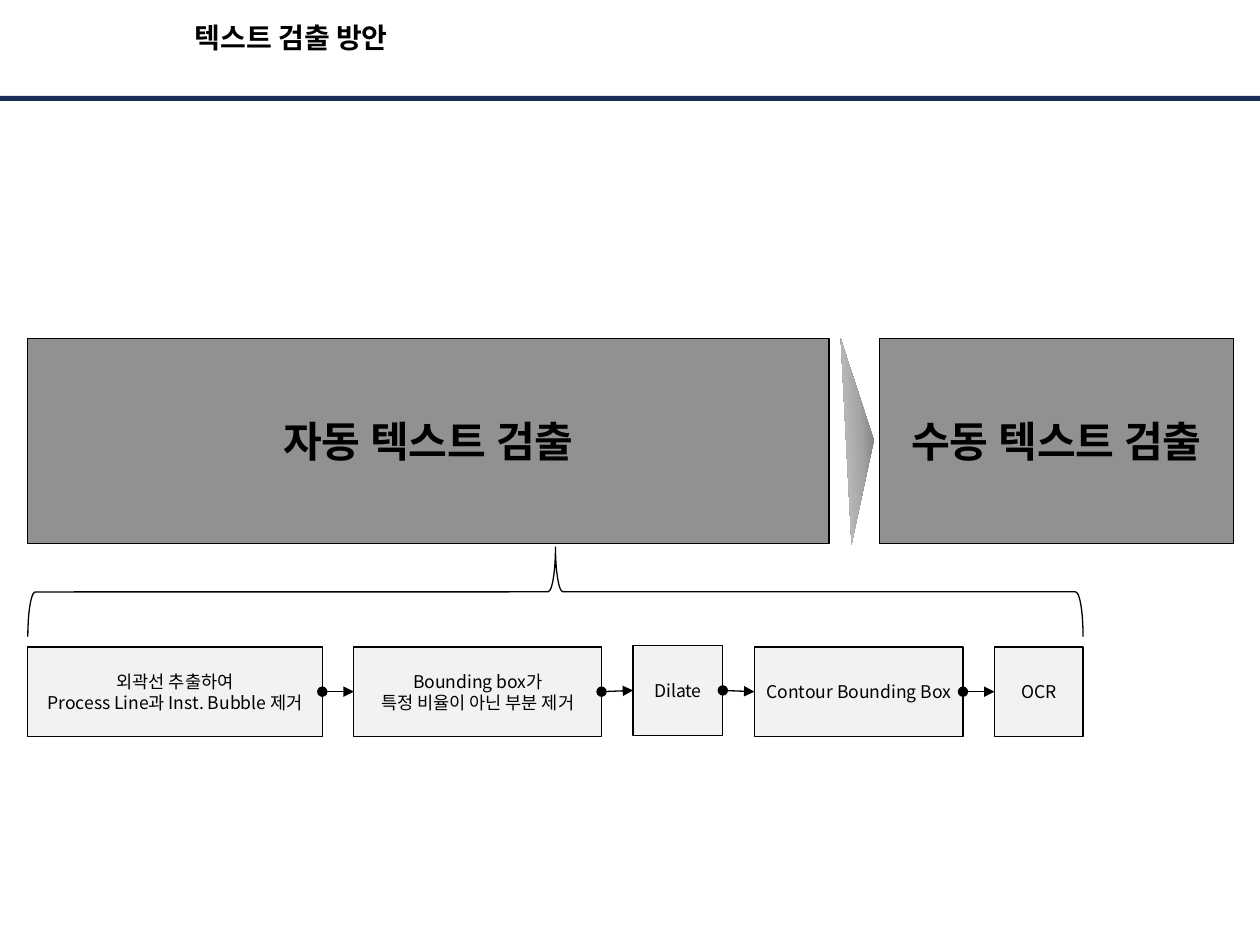
from copy import deepcopy
from pptx import Presentation
from pptx.dml.color import RGBColor
from pptx.enum.shapes import MSO_CONNECTOR as Connector, MSO_SHAPE as Shape
from pptx.enum.text import MSO_ANCHOR as Anchor, PP_ALIGN as Align
from pptx.oxml.ns import qn
from pptx.util import Inches, Pt
from lxml import etree

BLACK = RGBColor(0x00, 0x00, 0x00)
NAVY = RGBColor(0x1B, 0x2E, 0x5A)
GRAY = RGBColor(0x91, 0x91, 0x91)
PALE = RGBColor(0xF2, 0xF2, 0xF2)
ARROW_STOPS = [
    (0, RGBColor(0x6C, 0x6C, 0x6C)),
    (0.48, RGBColor(0xA4, 0xA4, 0xA4)),
    (1, RGBColor(0xC7, 0xC7, 0xC7)),
]
KOREAN_FONT = "Noto Sans CJK KR"

TITLE = "텍스트 검출 방안"
STAGES = [("자동 텍스트 검출", 0.22, 6.34), ("수동 텍스트 검출", 6.96, 2.8)]
STAGE_TOP, STAGE_HEIGHT = 2.68, 1.62
# text, top, width
STEPS = [
    ("외곽선 추출하여\nProcess Line과 Inst. Bubble 제거", 5.12, 2.33),
    ("Bounding box가\n특정 비율이 아닌 부분 제거", 5.12, 1.96),
    ("Dilate", 5.11, 0.71),
    ("Contour Bounding Box", 5.12, 1.65),
    ("OCR", 5.12, 0.7),
]
STEP_LEFT, STEP_HEIGHT, STEP_GAP = 0.22, 0.71, 0.25


def write(box, text, size, bold=False, font=KOREAN_FONT, **frame_format):
    frame = box.text_frame
    for name, value in frame_format.items():
        setattr(frame, name, value)
    frame.text = text
    for para in frame.paragraphs:
        para.alignment = Align.CENTER
        for span in para.runs:
            values = {"size": Pt(size), "bold": bold, "name": font}
            for name, value in values.items():
                setattr(span.font, name, value)
            span.font.color.rgb = BLACK
            east_asian = etree.SubElement(span.font._element, qn("a:ea"))
            east_asian.set("typeface", KOREAN_FONT)


def add_shape(page, kind, area, fill=None, outlined=True):
    shape = page.shapes.add_shape(kind, *map(Inches, area))
    shape.shadow.inherit = False
    if fill is None:
        shape.fill.background()
    else:
        shape.fill.solid()
        shape.fill.fore_color.rgb = fill
    if outlined:
        shape.line.color.rgb = BLACK
        shape.line.width = Pt(0.75)
    else:
        shape.line.fill.background()
    return shape


def add_box(page, text, area, fill, size, bold=False):
    box = add_shape(page, Shape.RECTANGLE, area, fill)
    write(box, text, size, bold, word_wrap=False, vertical_anchor=Anchor.MIDDLE)


def add_stage_arrow(page):
    arrow = add_shape(page, Shape.FLOWCHART_MERGE, (5.99, 3.38, 1.63, 0.22), outlined=False)
    arrow.rotation = 267
    arrow.fill.gradient()
    arrow.fill.gradient_angle = 90
    stop_list = arrow._element.spPr.find(".//" + qn("a:gsLst"))
    stop_list.insert(1, deepcopy(stop_list[0]))
    for stop, (position, color) in zip(arrow.fill.gradient_stops, ARROW_STOPS):
        stop.position = position
        stop.color.rgb = color


def add_step_arrow(page, start, end):
    arrow = page.shapes.add_connector(Connector.STRAIGHT, *map(Inches, start + end))
    arrow.line.color.rgb = BLACK
    arrow.line.width = Pt(0.75)
    line = arrow.line._get_or_add_ln()
    for tag, kind in (("a:headEnd", "oval"), ("a:tailEnd", "triangle")):
        etree.SubElement(line, qn(tag)).set("type", kind)
    etree.SubElement(arrow._element.spPr, qn("a:effectLst"))


def add_steps(page):
    left, previous_end = STEP_LEFT, None
    for text, top, width in STEPS:
        add_box(page, text, (left, top, width, STEP_HEIGHT), PALE, 10)
        middle = top + STEP_HEIGHT / 2
        if previous_end:
            add_step_arrow(page, previous_end, (left, middle))
        previous_end = (left + width, middle)
        left += width + STEP_GAP


def main():
    deck = Presentation()
    deck.slide_width, deck.slide_height = Inches(9.97), Inches(7.48)
    page = deck.slides.add_slide(deck.slide_layouts[6])

    add_shape(page, Shape.RECTANGLE, (0, 0.76, 9.97, 0.04), NAVY, outlined=False)
    title = page.shapes.add_textbox(*map(Inches, (0.13, 0.13, 4.35, 0.47)))
    write(title, TITLE, 16, True, "Arial", word_wrap=True, margin_top=Inches(0.03))

    for text, left, width in STAGES:
        add_box(page, text, (left, STAGE_TOP, width, STAGE_HEIGHT), GRAY, 24, True)
    add_stage_arrow(page)

    brace = add_shape(page, Shape.LEFT_BRACE, (4.04, 0.51, 0.71, 8.35))
    brace.rotation = 90
    add_steps(page)
    deck.save("out.pptx")


if __name__ == "__main__":
    main()
